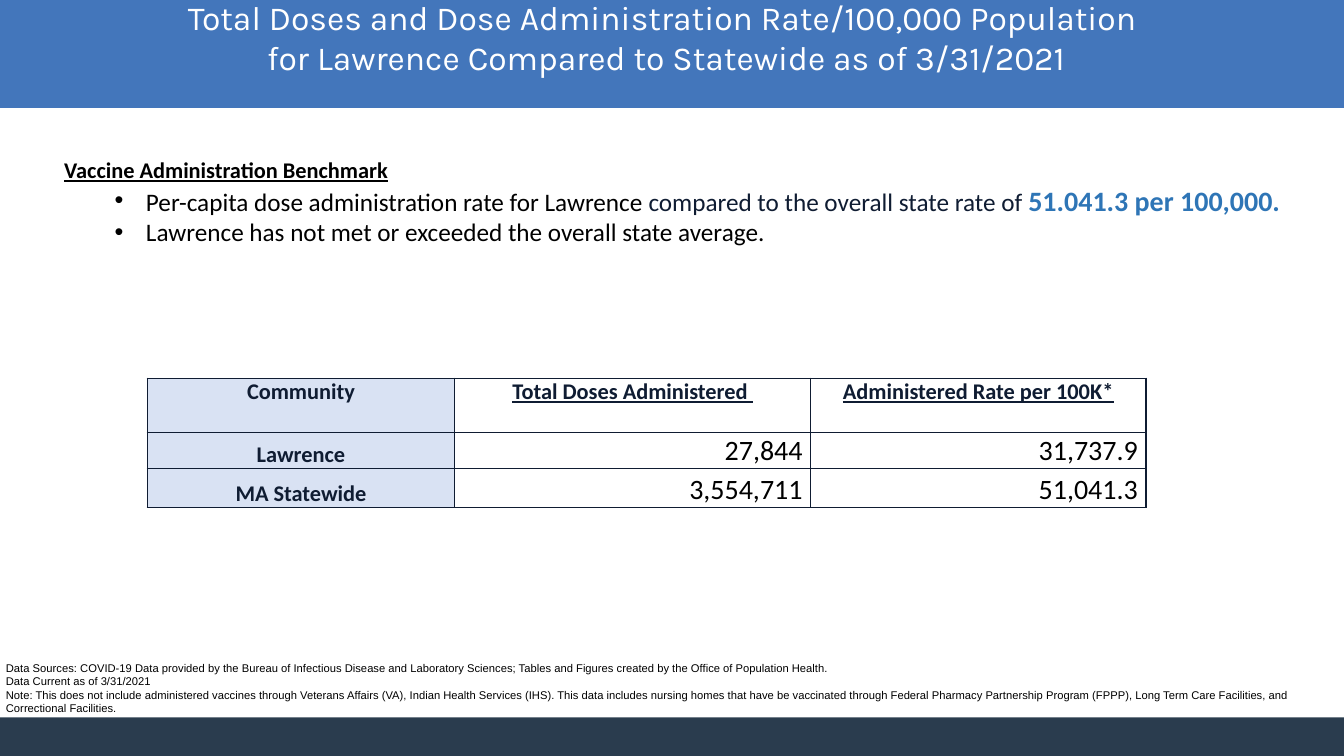
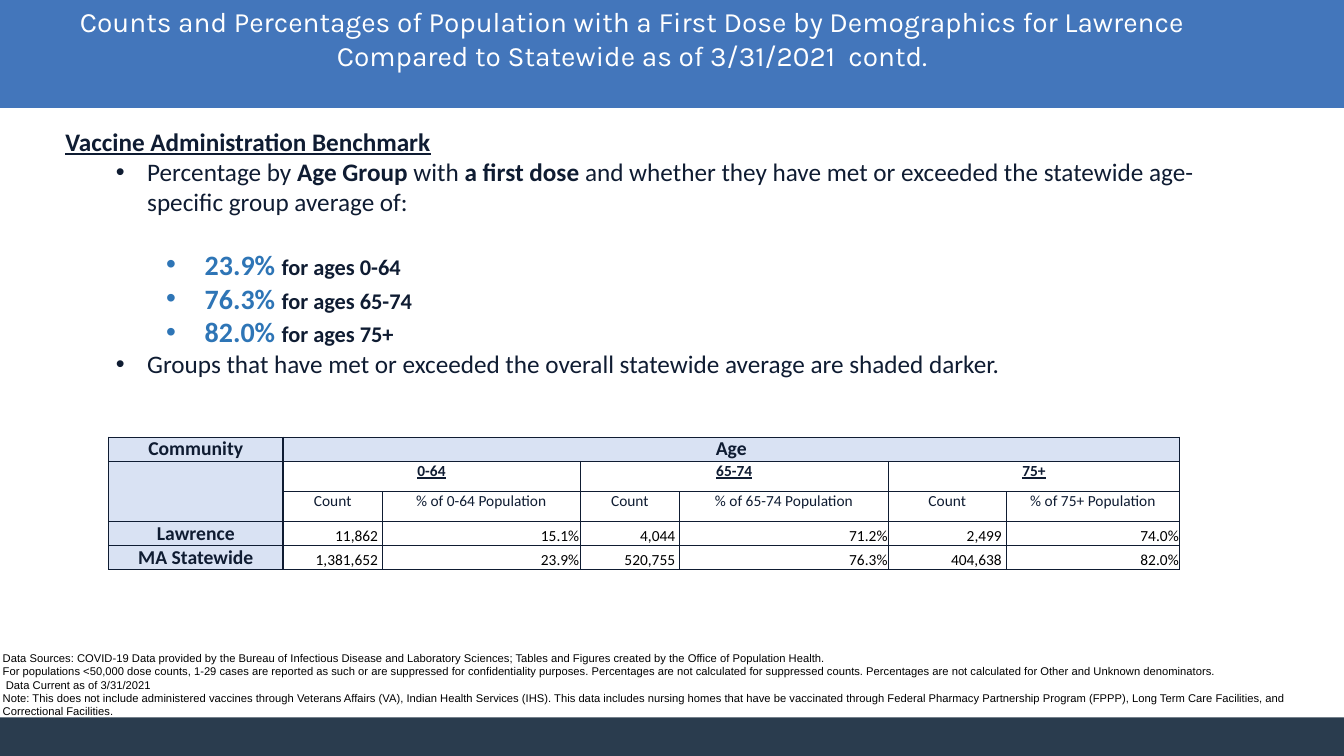
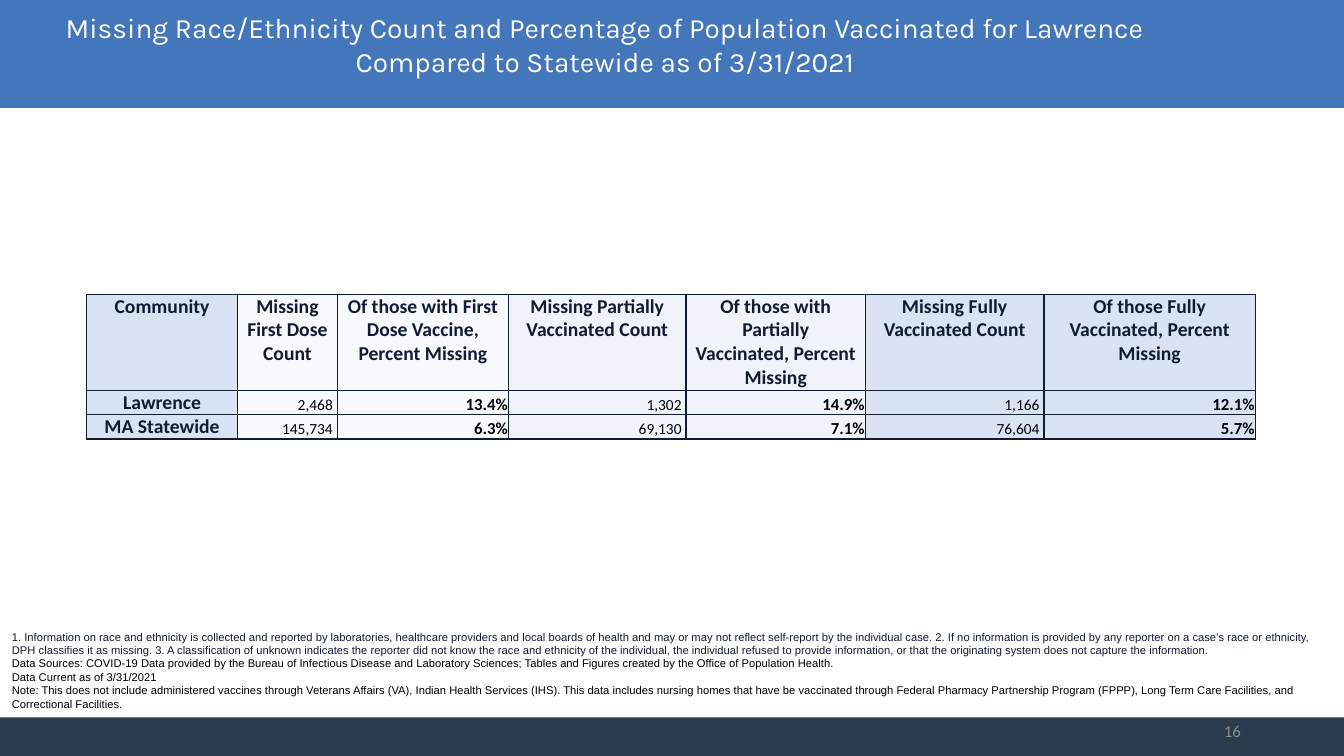
from lxml import etree
from pptx import Presentation, util as u
from pptx.dml.color import RGBColor
from pptx.enum import shapes, text
from pptx.oxml import ns

NAVY, BLACK, WHITE = "0F1C32", "000000", "FFFFFF"
ACCENT, GRAY = "2E75B6", "8C8C8C"
TITLE_BAND, FOOTER_BAND = "4376BB", "2A3C4E"
LABEL_FILL, FIRST_FILL, PARTIAL_FILL, FULL_FILL = "D9E2F3", "F7F9FD", "F0F3FA", "DAE3F3"
LEFT, CENTER, RIGHT = text.PP_ALIGN.LEFT, text.PP_ALIGN.CENTER, text.PP_ALIGN.RIGHT
WIDTH, HEIGHT = 33.87, 19.05

SOURCES = ("Data Sources: COVID-19 Data provided by the Bureau of Infectious Disease and "
           "Laboratory Sciences; Tables and Figures created by the Office of Population Health.")
CURRENT = "Data Current as of 3/31/2021"
NOTE = ("Note: This does not include administered vaccines through Veterans Affairs (VA), Indian "
        "Health Services (IHS). This data includes nursing homes that have be vaccinated through "
        "Federal Pharmacy Partnership Program (FPPP), Long Term Care Facilities, and Correctional "
        "Facilities.")
SUPPRESSION = ("For populations <50,000 dose counts, 1-29 cases are reported as such or are suppressed "
               "for confidentiality purposes. Percentages are not calculated for suppressed counts. "
               "Percentages are not calculated for Other and Unknown denominators.")
RACE_NOTE = ("1. Information on race and ethnicity is collected and reported by laboratories, healthcare "
             "providers and local boards of health and may or may not reflect self-report by the "
             "individual case. 2. If no information is provided by any reporter on a case’s race or "
             "ethnicity, DPH classifies it as missing. 3. A classification of unknown indicates the "
             "reporter did not know the race and ethnicity of the individual, the individual refused "
             "to provide information, or that the originating system does not capture the information.")


def rgb(value):
    return RGBColor.from_string(value)


def write(paragraph, content, size=18, font="Calibri", color=NAVY, bold=False, underline=False):
    run = paragraph.add_run()
    run.text = content
    run.font.size = u.Pt(size)
    run.font.name = font
    run.font.color.rgb = rgb(color)
    run.font.bold = bold
    run.font.underline = underline


def add_bullet(paragraph, indent, hanging):
    properties = paragraph._p.get_or_add_pPr()
    properties.set("marL", str(u.Cm(indent)))
    properties.set("indent", str(-u.Cm(hanging)))
    etree.SubElement(properties, ns.qn("a:buFont")).set("typeface", "Arial")
    etree.SubElement(properties, ns.qn("a:buChar")).set("char", "•")


def add_borders(cell, color=NAVY, width=1):
    properties = cell._tc.get_or_add_tcPr()
    for side in ("lnL", "lnR", "lnT", "lnB"):
        line = etree.SubElement(properties, ns.qn("a:" + side), w=str(u.Pt(width)))
        fill = etree.SubElement(line, ns.qn("a:solidFill"))
        etree.SubElement(fill, ns.qn("a:srgbClr"), val=color)


class Deck:
    """Holds the shared style and the slide being built."""

    def __init__(self):
        self.presentation = Presentation()
        self.presentation.slide_width = u.Cm(WIDTH)
        self.presentation.slide_height = u.Cm(HEIGHT)
        self.slide = None

    def start_slide(self):
        self.slide = self.presentation.slides.add_slide(self.presentation.slide_layouts[6])
        self.band(0, 2.72, TITLE_BAND)
        self.band(18.08, HEIGHT - 18.08, FOOTER_BAND)

    def band(self, top, height, color):
        shape = self.slide.shapes.add_shape(
            shapes.MSO_SHAPE.RECTANGLE, 0, u.Cm(top), u.Cm(WIDTH), u.Cm(height))
        shape.shadow.inherit = False
        shape.fill.solid()
        shape.fill.fore_color.rgb = rgb(color)
        shape.line.fill.background()

    def paragraphs(self, left, top, width, height, count, align=LEFT):
        """Add a text box and return its empty paragraphs."""
        frame = self.slide.shapes.add_textbox(
            u.Cm(left), u.Cm(top), u.Cm(width), u.Cm(height)).text_frame
        frame.word_wrap = True
        for _ in range(count - 1):
            frame.add_paragraph()
        for paragraph in frame.paragraphs:
            paragraph.alignment = align
        return frame.paragraphs

    def title(self, left, top, width, lines, size=20):
        paragraph, = self.paragraphs(left, top, width, 2.54, 1, CENTER)
        for index, line in enumerate(lines):
            if index:
                paragraph.add_line_break()
            write(paragraph, line, size=size, font="Karla", color=WHITE)

    def notes(self, left, top, width, lines):
        height = 0.25 + 0.34 * (len(lines) + 1)
        for paragraph, line in zip(self.paragraphs(left, top, width, height, len(lines)), lines):
            color = NAVY if line == RACE_NOTE else BLACK
            write(paragraph, line, size=8, font="Arial", color=color)

    def benchmark(self, left, top, width, height, heading, bullets):
        """Heading format, then bullets as (level, space before, runs)."""
        first, *others = self.paragraphs(left, top, width, height, len(bullets) + 1)
        write(first, "Vaccine Administration Benchmark", bold=True, underline=True, **heading)
        for paragraph, (level, space, runs) in zip(others, bullets):
            add_bullet(paragraph, *((2.06, 0.79) if level == 1 else (3.51, 0.97)))
            paragraph.space_before = u.Pt(space)
            for content, style in runs:
                write(paragraph, content, **style)

    def page_number(self, number):
        paragraph, = self.paragraphs(23.93, 18.03, 7.59, 1.02, 1, RIGHT)
        write(paragraph, number, size=12, color=GRAY)

    def table(self, left, top, widths, heights, rows, headers, fills, label_size,
              number_size, percent=None, top_fill=None, merges=()):
        """Headers holds one text format for each header row; fills one colour a column."""
        table = self.slide.shapes.add_table(
            len(rows), len(widths), u.Cm(left), u.Cm(top),
            u.Cm(sum(widths)), u.Cm(sum(heights))).table
        table.first_row = table.horz_banding = False
        for column, width in zip(table.columns, widths):
            column.width = u.Cm(width)
        for row, height in zip(table.rows, heights):
            row.height = u.Cm(height)
        for r, values in enumerate(rows):
            for c, value in enumerate(values):
                cell = table.cell(r, c)
                is_header, is_label = r < len(headers), c == 0
                is_number = not (is_header or is_label)
                add_borders(cell)
                cell.fill.solid()
                cell.fill.fore_color.rgb = rgb(top_fill if top_fill and r == 0 else fills[c])
                cell.margin_top = cell.margin_bottom = 0
                cell.margin_left = cell.margin_right = u.Cm(0.2)
                paragraph = cell.text_frame.paragraphs[0]
                paragraph.alignment = RIGHT if is_number else CENTER
                if not is_header:
                    cell.vertical_anchor = text.MSO_ANCHOR.BOTTOM
                if is_number:
                    is_percent = value.endswith("%")
                    cell.margin_left = u.Cm(0.02)
                    cell.margin_right = u.Cm(0.02 if is_percent else number_size / 100)
                    style = dict(size=number_size, color=BLACK)
                    if is_percent and percent:
                        style.update(percent)
                elif is_label:
                    style = dict(size=label_size if value else 11, bold=True)
                else:
                    style = headers[r]
                write(paragraph, value, **style)
        for r1, c1, r2, c2 in merges:
            table.cell(r1, c1).merge(table.cell(r2, c2))


def build_rate_slide(deck):
    deck.start_slide()
    deck.title(1.73, -0.2, 30.12, [
        "Total Doses and Dose Administration Rate/100,000 Population ",
        "for Lawrence Compared to Statewide as of 3/31/2021"], size=24)
    deck.table(
        3.71, 9.53, [7.75, 8.97, 8.45], [1.37, 0.9, 0.99],
        [["Community", "Total Doses Administered ", "Administered Rate per 100K*"],
         ["Lawrence", "27,844", "31,737.9"],
         ["MA Statewide", "3,554,711", "51,041.3"]],
        headers=[dict(size=16, bold=True, underline=True)],
        fills=[LABEL_FILL, WHITE, WHITE], label_size=16, number_size=20)
    deck.notes(-0.1, 16.54, 33.78, [SOURCES, CURRENT, NOTE])
    deck.benchmark(1.37, 3.81, 31.83, 2.57, dict(size=16, color=BLACK), [
        (1, 0, [("Per-capita dose administration rate for Lawrence", dict(color=BLACK)),
                (" compared to the overall state rate of ", {}),
                ("51.041.3 per 100,000.", dict(size=20, color=ACCENT, bold=True))]),
        (1, 0, [("Lawrence has not met or exceeded the overall state average.",
                 dict(color=BLACK))])])


def build_age_slide(deck):
    deck.start_slide()
    deck.title(0.05, 0, 31.78, [
        "Counts and Percentages of Population with a First Dose by Demographics for Lawrence "
        "Compared to Statewide as of 3/31/2021  contd."])
    averages = [("23.9% ", "0-64"), ("76.3% ", "65-74"), ("82.0% ", "75+")]
    bold = dict(bold=True)
    deck.benchmark(1.4, 3.05, 30.4, 6.58, dict(size=18), [
        (1, 0, [("Percentage by ", {}), ("Age Group ", bold), ("with", {}),
                (" a first dose ", bold),
                ("and whether they have met or exceeded the statewide age-specific group "
                 "average of:", {})]),
        *[(2, 0 if index else 22, [(share, dict(size=20, color=ACCENT, bold=True)),
                                   ("for ages " + ages, dict(size=16, bold=True))])
          for index, (share, ages) in enumerate(averages)],
        (1, 0, [("Groups that have met or exceeded the overall statewide average are shaded "
                 "darker.", {})])])
    groups = [ages for _, ages in averages]
    deck.table(
        2.74, 11.02, [4.39, 2.51, 4.98, 2.51, 5.26, 2.97, 4.37], [0.61, 0.76, 0.76, 0.6, 0.6],
        [["Community", "Age"] + [""] * 5,
         [""] + [value for ages in groups for value in (ages, "")],
         [""] + [value for ages in groups for value in ("Count", f"% of {ages} Population")],
         ["Lawrence", "11,862", "15.1%", "4,044", "71.2%", "2,499", "74.0%"],
         ["MA Statewide", "1,381,652", "23.9%", "520,755", "76.3%", "404,638", "82.0%"]],
        headers=[dict(size=14, bold=True), dict(size=11, bold=True, underline=True),
                 dict(size=11)],
        fills=[LABEL_FILL] + [WHITE] * 6, top_fill=LABEL_FILL, label_size=14, number_size=11,
        merges=[(0, 1, 0, 6), (1, 0, 2, 0)] + [(1, c, 1, c + 1) for c in (1, 3, 5)])
    deck.notes(-0.18, 16.28, 33.58, [SOURCES, SUPPRESSION, " " + CURRENT, NOTE])


def build_missing_slide(deck):
    deck.start_slide()
    deck.table(
        2.18, 7.42, [3.81, 2.51, 4.32, 4.47, 4.52, 4.5, 5.33], [2.42, 0.61, 0.61],
        [["Community", "Missing First Dose Count",
          "Of those with First Dose Vaccine, Percent Missing",
          "Missing Partially Vaccinated Count",
          "Of those with Partially Vaccinated, Percent Missing",
          "Missing Fully Vaccinated Count", "Of those Fully Vaccinated, Percent Missing"],
         ["Lawrence", "2,468", "13.4%", "1,302", "14.9%", "1,166", "12.1%"],
         ["MA Statewide", "145,734", "6.3%", "69,130", "7.1%", "76,604", "5.7%"]],
        headers=[dict(size=14, bold=True)],
        fills=[LABEL_FILL] + [fill for fill in (FIRST_FILL, PARTIAL_FILL, FULL_FILL)
                              for _ in range(2)],
        label_size=14, number_size=11, percent=dict(size=12, bold=True))
    deck.notes(0.05, 15.75, 33.78, [RACE_NOTE, SOURCES, CURRENT, NOTE])
    deck.page_number("16")
    deck.title(0.05, 0.15, 30.4, [
        "Missing Race/Ethnicity Count and Percentage of Population Vaccinated for Lawrence "
        "Compared to Statewide as of 3/31/2021"])


def main():
    deck = Deck()
    build_rate_slide(deck)
    build_age_slide(deck)
    build_missing_slide(deck)
    deck.presentation.save("out.pptx")


if __name__ == "__main__":
    main()
